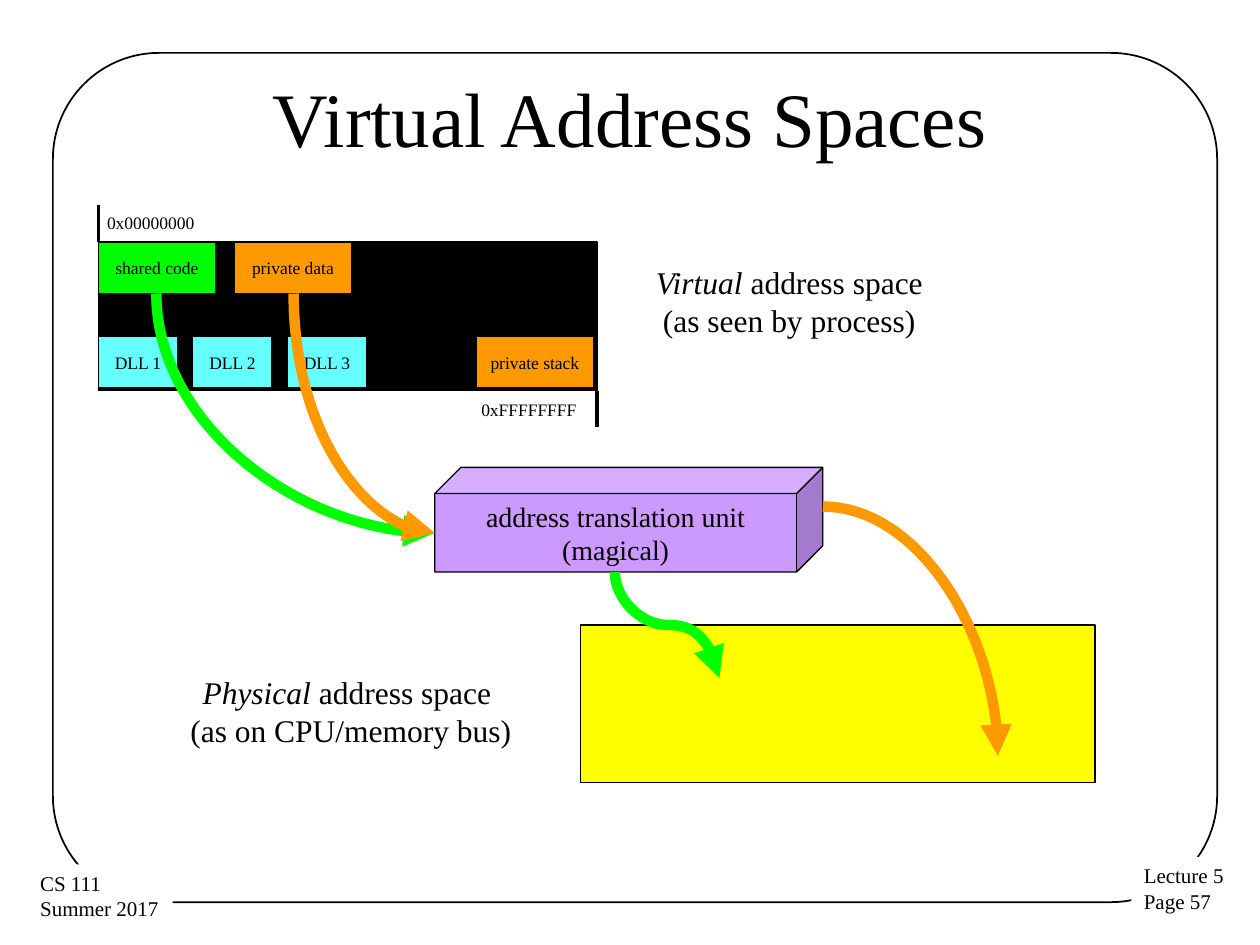
from dataclasses import dataclass

import pptx
import pptx.dml.color
import pptx.enum.shapes
import pptx.enum.text
import pptx.oxml.ns
import pptx.oxml.xmlchemy
import pptx.util
from pptx.util import Inches

SHAPE = pptx.enum.shapes.MSO_SHAPE
CONNECTOR = pptx.enum.shapes.MSO_CONNECTOR
ALIGN = pptx.enum.text.PP_ALIGN
ANCHOR = pptx.enum.text.MSO_ANCHOR
AUTO_SIZE = pptx.enum.text.MSO_AUTO_SIZE
qn = pptx.oxml.ns.qn


@dataclass(frozen=True)
class Theme:
    font: str = "Times New Roman"
    ink: str = "000000"
    paper: str = "FFFFFF"
    shared: str = "00FF00"
    private: str = "FF9900"
    dll: str = "66FFFF"
    unit: str = "CC99FF"
    memory: str = "FFFF00"
    title_size: int = 44
    caption_size: int = 18
    unit_size: int = 16
    corner_size: int = 12
    segment_size: int = 10
    outline: float = 0.75
    frame_line: float = 1
    mapping_line: float = 6


THEME = Theme()


def rgb(color):
    return pptx.dml.color.RGBColor.from_string(color)


def write(frame, lines, size, align=ALIGN.LEFT):
    """Write lines, each a list of (text, italic) runs."""
    for i, runs in enumerate(lines):
        paragraph = frame.paragraphs[0] if i == 0 else frame.add_paragraph()
        paragraph.alignment = align
        for text, italic in runs:
            run = paragraph.add_run()
            run.text = text
            run.font.name = THEME.font
            run.font.size = pptx.util.Pt(size)
            run.font.italic = italic
            run.font.color.rgb = rgb(THEME.ink)


def plain(*texts):
    return [[(text, False)] for text in texts]


def set_margins(frame, across, down):
    frame.margin_left = frame.margin_right = Inches(across)
    frame.margin_top = frame.margin_bottom = Inches(down)


def add_block(slide, kind, box, fill=None, line=THEME.outline):
    block = slide.shapes.add_shape(kind, *map(Inches, box))
    block.shadow.inherit = False
    if fill:
        block.fill.solid()
        block.fill.fore_color.rgb = rgb(fill)
    else:
        block.fill.background()
    block.line.color.rgb = rgb(THEME.ink)
    block.line.width = pptx.util.Pt(line)
    return block


def add_label(slide, box, lines, size, align=ALIGN.LEFT, margins=(0.1, 0.05)):
    label = slide.shapes.add_textbox(*map(Inches, box))
    frame = label.text_frame
    frame.word_wrap = False
    frame.auto_size = AUTO_SIZE.SHAPE_TO_FIT_TEXT
    set_margins(frame, *margins)
    write(frame, lines, size, align)
    return label


def add_line(slide, kind, start, end, color, width):
    line = slide.shapes.add_connector(kind, *map(Inches, (*start, *end)))
    line.line.color.rgb = rgb(color)
    line.line.width = pptx.util.Pt(width)
    line._element.spPr.append(pptx.oxml.xmlchemy.OxmlElement("a:effectLst"))
    return line


def add_mapping(slide, start, end, color, preset="curvedConnector2", downward=True):
    """Curved arrow to the lower right that leaves start downward or rightward."""
    (x1, y1), (x2, y2) = start, end
    if downward:
        # A quarter turn swaps the sides of the box about its centre.
        cx, cy = (x1 + x2) / 2, (y1 + y2) / 2
        half_w, half_h = (y2 - y1) / 2, (x2 - x1) / 2
        start, end = (cx - half_w, cy - half_h), (cx + half_w, cy + half_h)
    arrow = add_line(slide, CONNECTOR.CURVE, start, end, color, THEME.mapping_line)
    properties = arrow._element.spPr
    properties.find(qn("a:prstGeom")).set("prst", preset)
    if downward:
        transform = properties.find(qn("a:xfrm"))
        transform.set("rot", str(270 * 60000))
        transform.set("flipH", "1")
    head = pptx.oxml.xmlchemy.OxmlElement("a:tailEnd")
    head.set("type", "triangle")
    properties.find(qn("a:ln")).append(head)


def add_page_frame(slide, box):
    left, top, width, height = box
    frame = add_block(slide, SHAPE.ROUNDED_RECTANGLE, box, line=THEME.frame_line)
    frame.adjustments[0] = 0.125
    bottom = top + height
    corners = (
        ((left + width - 0.68, bottom - 0.36, 0.84, 0.51), ("Lecture 5", "Page 57")),
        ((left - 0.2, bottom - 0.3, 1.15, 0.51), ("CS 111", "Summer 2017")),
    )
    for corner_box, texts in corners:
        corner = add_label(slide, corner_box, plain(*texts), THEME.corner_size)
        corner.fill.solid()
        corner.fill.fore_color.rgb = rgb(THEME.paper)


def add_title(slide, box):
    title = slide.shapes.title
    title.left, title.top, title.width, title.height = map(Inches, box)
    title.text_frame.vertical_anchor = ANCHOR.MIDDLE
    write(title.text_frame, plain("Virtual Address Spaces"), THEME.title_size, ALIGN.CENTER)


def add_virtual_space(slide, box):
    left, top, width, height = box
    right, bottom = left + width, top + height
    add_block(slide, SHAPE.RECTANGLE, box, THEME.ink)
    for x, y in ((left, top - 0.29), (right, bottom)):
        add_line(slide, CONNECTOR.STRAIGHT, (x, y), (x, y + 0.29), THEME.ink, 0)
    for address_box, address in (
        ((left + 0.07, top - 0.24, 0.7, 0.17), "0x00000000"),
        ((right - 0.92, bottom + 0.07, 0.77, 0.17), "0xFFFFFFFF"),
    ):
        add_label(slide, address_box, plain(address), THEME.segment_size, margins=(0, 0))

    lower = 0.75
    segments = [
        ("shared code", 0, 0, 0.93, THEME.shared),
        ("private data", 1.08, 0, 0.93, THEME.private),
        ("private stack", 3, lower, 0.93, THEME.private),
    ]
    segments += [(f"DLL {i + 1}", 0.75 * i, lower, 0.63, THEME.dll) for i in range(3)]
    for name, dx, dy, segment_width, color in segments:
        segment = add_block(
            slide, SHAPE.RECTANGLE, (left + dx, top + dy, segment_width, 0.41), color)
        frame = segment.text_frame
        frame.word_wrap = False
        frame.vertical_anchor = ANCHOR.MIDDLE
        set_margins(frame, 0.09, 0.04)
        write(frame, plain(name), THEME.segment_size, ALIGN.CENTER)


def add_caption(slide, box, kind, note):
    lines = [[(kind, True), (" address space ", False)], [(note, False)]]
    add_label(slide, box, lines, THEME.caption_size, ALIGN.CENTER)


def add_translation_unit(slide, box):
    unit = add_block(slide, SHAPE.CUBE, box, THEME.unit)
    unit.adjustments[0] = 0.25
    frame = unit.text_frame
    frame.word_wrap = False
    frame.vertical_anchor = ANCHOR.MIDDLE
    write(frame, plain("address translation unit", "(magical)"), THEME.unit_size, ALIGN.CENTER)


def add_mappings(slide, unit_box):
    left, top, width, height = unit_box
    entry = (left, top + 0.52)
    add_mapping(slide, (1.24, 2.33), entry, THEME.shared)
    add_mapping(slide, (4.88, top + height), (5.71, 5.38), THEME.shared, "curvedConnector3")
    add_mapping(slide, (2.33, 2.33), entry, THEME.private)
    add_mapping(slide, (left + width, top + 0.31), (7.92, 6), THEME.private, downward=False)


def main():
    deck = pptx.Presentation()
    deck.slide_width, deck.slide_height = Inches(10), Inches(7.5)
    slide = deck.slides.add_slide(deck.slide_layouts.get_by_name("Title Only"))
    unit_box = (3.45, 3.71, 3.08, 0.83)

    add_page_frame(slide, (0.42, 0.42, 9.24, 6.74))
    add_title(slide, (0.5, 0.3, 9, 1.25))
    add_virtual_space(slide, (0.78, 1.92, 3.96, 1.18))
    add_caption(slide, (5.08, 2.04, 2.37, 0.71), "Virtual", "(as seen by process)")
    add_block(slide, SHAPE.RECTANGLE, (4.61, 4.96, 4.08, 1.25), THEME.memory)
    add_caption(slide, (1.4, 5.29, 2.77, 0.71), "Physical", "(as on CPU/memory bus)")
    add_translation_unit(slide, unit_box)
    add_mappings(slide, unit_box)
    deck.save("out.pptx")


if __name__ == "__main__":
    main()
